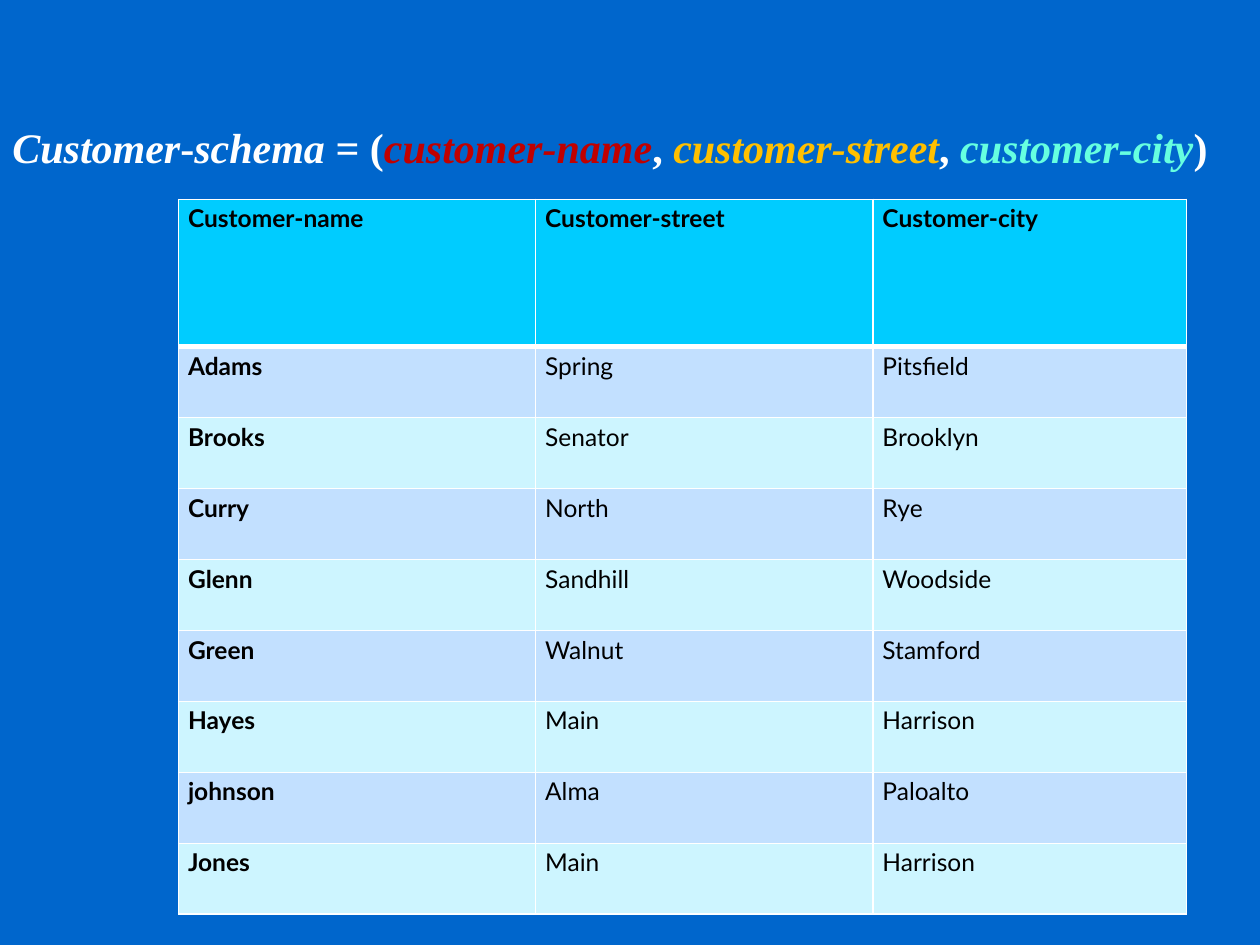
from dataclasses import dataclass

from lxml import etree
from pptx import Presentation
from pptx.dml.color import RGBColor
from pptx.enum.text import MSO_AUTO_SIZE
from pptx.oxml.ns import qn
from pptx.util import Cm, Pt

SHAPE_TO_FIT = MSO_AUTO_SIZE.SHAPE_TO_FIT_TEXT


@dataclass(frozen=True)
class Theme:
    background: str = "0066CC"
    white: str = "FFFFFF"
    black: str = "000000"
    red: str = "C00000"
    gold: str = "FFC000"
    aqua: str = "66FFE0"
    header: str = "00CCFF"
    bands: tuple = ("C2E0FF", "CDF5FF")
    schema_font: str = "Times New Roman"
    schema_size: int = 24
    table_font: str = "Lato"
    table_size: int = 14
    thin: int = 1
    thick: int = 3


THEME = Theme()

# text, colour, italic
SCHEMA = [
    ("Customer", THEME.white, True),
    ("-", THEME.white, False),
    ("schema ", THEME.white, True),
    ("= (", THEME.white, False),
    ("customer-name", THEME.red, True),
    (", ", THEME.white, False),
    ("customer-street", THEME.gold, True),
    (", ", THEME.white, False),
    ("customer-city", THEME.aqua, True),
    (")", THEME.white, False),
]

CUSTOMERS = [
    ("Customer-name", "Customer-street", "Customer-city"),
    ("Adams", "Spring", "Pitsfield"),
    ("Brooks", "Senator", "Brooklyn"),
    ("Curry", "North", "Rye"),
    ("Glenn", "Sandhill", "Woodside"),
    ("Green", "Walnut", "Stamford"),
    ("Hayes", "Main", "Harrison"),
    ("johnson", "Alma", "Paloalto"),
    ("Jones", "Main", "Harrison"),
]
COLUMN_WIDTHS = (7.2, 6.8, 6.32)
HEADER_HEIGHT, ROW_HEIGHT = 2.97, 1.43


def add_run(p, text, font, size, color, bold=False, italic=False):
    r = p.add_run()
    r.text = text
    r.font.name = font
    r.font.size = Pt(size)
    r.font.color.rgb = RGBColor.from_string(color)
    r.font.bold = bold
    r.font.italic = italic


def set_borders(cell, top, bottom):
    """Draw white borders; top and bottom are widths in points."""
    tc_pr = cell._tc.get_or_add_tcPr()
    widths = {"a:lnL": THEME.thin, "a:lnR": THEME.thin, "a:lnT": top, "a:lnB": bottom}
    for tag, width in widths.items():
        ln = etree.SubElement(tc_pr, qn(tag), w=str(Pt(width)))
        fill = etree.SubElement(ln, qn("a:solidFill"))
        etree.SubElement(fill, qn("a:srgbClr"), val=THEME.white)


def fill_cell(cell, text, row, col):
    is_header = row == 0
    set_borders(
        cell,
        top=THEME.thick if row == 1 else THEME.thin,
        bottom=THEME.thick if is_header else THEME.thin,
    )
    color = THEME.header if is_header else THEME.bands[(row - 1) % 2]
    cell.fill.solid()
    cell.fill.fore_color.rgb = RGBColor.from_string(color)
    cell.margin_left = cell.margin_right = Cm(0.19)
    cell.margin_top = cell.margin_bottom = Cm(0)
    p = cell.text_frame.paragraphs[0]
    p.line_spacing = 1.15
    add_run(p, text, THEME.table_font, THEME.table_size, THEME.black,
            bold=is_header or col == 0)


def add_customer_table(s):
    height = HEADER_HEIGHT + ROW_HEIGHT * (len(CUSTOMERS) - 1)
    table = s.shapes.add_table(
        len(CUSTOMERS), len(COLUMN_WIDTHS),
        Cm(3.6), Cm(4.02), Cm(sum(COLUMN_WIDTHS)), Cm(height),
    ).table
    for column, width in zip(table.columns, COLUMN_WIDTHS):
        column.width = Cm(width)
    for i, values in enumerate(CUSTOMERS):
        table.rows[i].height = Cm(ROW_HEIGHT if i else HEADER_HEIGHT)
        for j, text in enumerate(values):
            fill_cell(table.cell(i, j), text, i, j)


def add_schema_line(s):
    tf = s.shapes.add_textbox(Cm(0), Cm(2.33), Cm(25.83), Cm(1.28)).text_frame
    tf.word_wrap = True
    tf.auto_size = SHAPE_TO_FIT
    p = tf.paragraphs[0]
    for text, color, italic in SCHEMA:
        add_run(p, text, THEME.schema_font, THEME.schema_size, color,
                bold=True, italic=italic)


def main():
    prs = Presentation()
    prs.slide_width, prs.slide_height = Cm(25.4), Cm(19.05)
    s = prs.slides.add_slide(prs.slide_layouts[6])
    s.background.fill.solid()
    s.background.fill.fore_color.rgb = RGBColor.from_string(THEME.background)
    add_customer_table(s)
    add_schema_line(s)
    prs.save("out.pptx")


if __name__ == "__main__":
    main()
